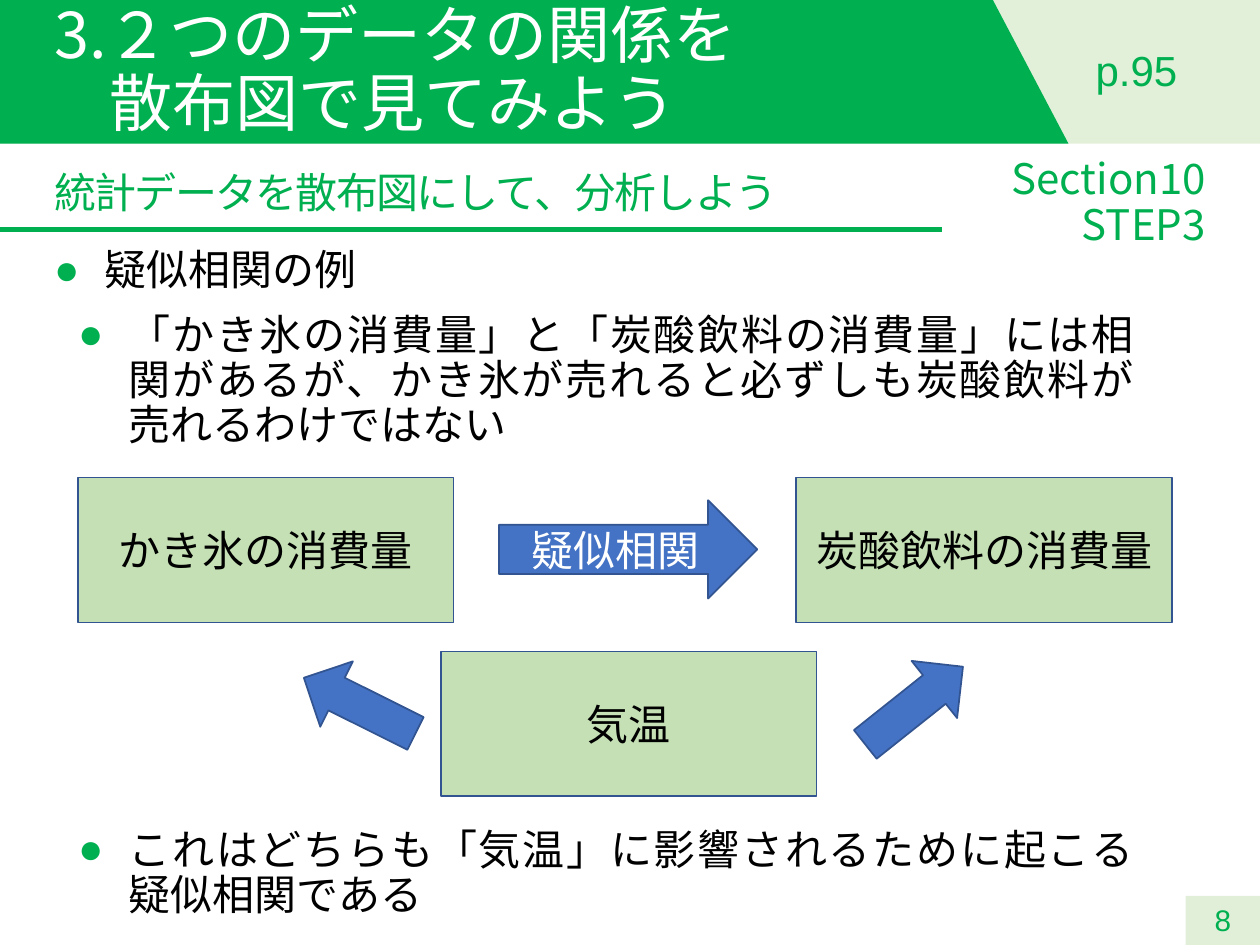
from dataclasses import dataclass, field

from lxml import etree
from pptx import Presentation
from pptx.dml.color import RGBColor
from pptx.enum.shapes import MSO_CONNECTOR, MSO_SHAPE
from pptx.enum.text import MSO_ANCHOR, MSO_AUTO_SIZE, PP_ALIGN
from pptx.oxml.ns import qn
from pptx.util import Inches, Pt

RECT, ARROW = MSO_SHAPE.RECTANGLE, MSO_SHAPE.RIGHT_ARROW
LINE = MSO_CONNECTOR.STRAIGHT
TOP, MID = MSO_ANCHOR.TOP, MSO_ANCHOR.MIDDLE
LEFT, RIGHT = PP_ALIGN.LEFT, PP_ALIGN.RIGHT
CENTER, JUST = PP_ALIGN.CENTER, PP_ALIGN.JUSTIFY
GROW, FIXED = MSO_AUTO_SIZE.SHAPE_TO_FIT_TEXT, MSO_AUTO_SIZE.NONE

# The slide is a grid of 100 columns by 75 rows
COLS, ROWS = 100, 75
WIDE, HIGH = Inches(10), Inches(7.5)
JP, LATIN = "Noto Sans CJK JP", "Arial"
HEX = {"green": "00B050", "pale": "E2F0D9", "leaf": "C5E0B4", "blue": "4472C4",
       "edge": "325491", "black": "000000", "white": "FFFFFF"}


@dataclass
class Style:
    color: str = "green"
    size: float = 24
    face: str = JP
    align: int = LEFT
    anchor: int = TOP
    fit: int = GROW
    pad: tuple = (0, 0.05, 0, 0.05)
    space: float | None = 0.9
    before: float = 0
    hang: float = 0
    bullet: str = ""
    track: int = 0


@dataclass
class Label:
    text: str
    area: tuple
    style: Style = field(default_factory=Style)


@dataclass
class Block:
    kind: int
    area: tuple
    fill: str
    edge: str = ""
    text: str = ""
    ink: str = "black"
    turn: float = 0
    alpha: int = 100


def col(n: float) -> int:
    return round(WIDE * n / COLS)


def row(n: float) -> int:
    return round(HIGH * n / ROWS)


def place(area: tuple) -> tuple:
    x, y, w, h = area
    return col(x), row(y), col(w), row(h)


def rgb(name: str) -> RGBColor:
    return RGBColor.from_string(HEX[name])


def apply(target, values: dict) -> None:
    for name, value in values.items():
        setattr(target, name, value)


def paint(shape, fill: str, edge: str = "", alpha: int = 100) -> None:
    shape.shadow.inherit = False
    shape.fill.solid()
    shape.fill.fore_color.rgb = rgb(fill)
    if alpha < 100:
        tint = shape.fill._xPr.find(qn("a:solidFill"))[0]
        etree.SubElement(tint, qn("a:alpha"), val=str(alpha * 1000))
    if edge:
        shape.line.color.rgb = rgb(edge)
        shape.line.width = Pt(1)
    else:
        shape.line.fill.background()


def write(shape, text: str, style: Style) -> None:
    frame = shape.text_frame
    left, top, right, low = map(Inches, style.pad)
    apply(frame, {"word_wrap": True, "auto_size": style.fit,
                  "vertical_anchor": style.anchor, "margin_left": left,
                  "margin_top": top, "margin_right": right, "margin_bottom": low})
    frame.text = text
    for para in frame.paragraphs:
        apply(para, {"alignment": style.align, "line_spacing": style.space,
                     "space_before": Pt(style.before)})
        props = para._p.get_or_add_pPr()
        if style.hang:
            props.set("marL", str(Inches(style.hang)))
            props.set("indent", str(-Inches(style.hang)))
        if style.bullet:
            tint = etree.SubElement(props, qn("a:buClr"))
            etree.SubElement(tint, qn("a:srgbClr"), val=HEX["green"])
            etree.SubElement(props, qn("a:buFont"), typeface=LATIN)
            etree.SubElement(props, qn("a:buChar"), char=style.bullet)
        for run in para.runs:
            apply(run.font, {"size": Pt(style.size), "name": style.face})
            run.font.color.rgb = rgb(style.color)
            mark = run.font._element
            mark.find(qn("a:latin")).addnext(
                mark.makeelement(qn("a:ea"), {"typeface": style.face}))
            if style.track:
                mark.set("spc", str(style.track))


def draw_block(slide, block: Block) -> None:
    shape = slide.shapes.add_shape(block.kind, *place(block.area))
    shape.rotation = block.turn
    paint(shape, block.fill, block.edge, block.alpha)
    if block.text:
        write(shape, block.text, Style(color=block.ink, align=CENTER, anchor=MID, fit=FIXED,
                                       pad=(0.1, 0.05, 0.1, 0.05), space=None))


def draw_label(slide, label: Label) -> None:
    write(slide.shapes.add_textbox(*place(label.area)), label.text, label.style)


def draw_banner(slide) -> None:
    pen = slide.shapes.build_freeform(0, 0)
    pen.add_line_segments([(col(78.8), 0), (col(84.8), row(BAND)), (0, row(BAND))], close=True)
    paint(pen.convert_to_shape(), "green")


def draw_rule(slide) -> None:
    rule = slide.shapes.add_connector(LINE, 0, row(18.2), col(74.8), row(18.2))
    rule.line.color.rgb = rgb("green")
    rule.line.width = Pt(3)
    etree.SubElement(rule._element.spPr, qn("a:effectLst"))


BAND = 11.4
BOX = (29.8, 11.5)
TIP = (9.9, 5.8)
ITEM = Style(color="black", align=JUST, pad=(0, 0, 0.02, 0.05), hang=0.4, bullet="●")

FRAME = [
    Block(RECT, (94.1, 71.1, 5.9, 3.9), "leaf", alpha=50),
    Block(RECT, (0, 0, COLS, BAND), "pale"),
]
HEADS = [
    Label("3.２つのデータの関係を\v散布図で見てみよう", (4.3, 0, 80.3, BAND),
          Style("white", 36, anchor=MID, fit=FIXED, pad=(0, 0, 0, 0), hang=0.44)),
    Label("8", (94.1, 71, 5.9, 4),
          Style(size=17, face=LATIN, align=CENTER, anchor=MID, fit=FIXED, space=None)),
    Label("統計データを散布図にして、分析しよう", (4.3, 13.2, 70.5, 4.6),
          Style(before=10, track=-100)),
    Label("Section10\nSTEP3", (71.1, 12.1, 24.6, 8.3), Style(align=RIGHT)),
    Label("p.95", (84.7, 3.5, 11, 4.6), Style(face=LATIN, align=CENTER, before=10)),
]
# Two consumption boxes share one cause below them
CHART = [
    Block(RECT, (x, y, *BOX), "leaf", "edge", text)
    for x, y, text in [(6.2, 37.9, "かき氷の消費量"), (63.2, 37.9, "炭酸飲料の消費量"),
                       (35, 51.7, "気温")]
] + [Block(ARROW, (39.6, 39.7, 20.5, 7.8), "blue", "edge", "疑似相関", "white")] + [
    Block(ARROW, (x, 53.1, *TIP), "blue", "edge", turn=turn)
    for x, turn in [(23.6, 206.5), (67.6, 321.5)]
]
ITEMS = [
    Label("疑似相関の例", (4.3, 19.8, 85.5, 4.1), ITEM),
    Label("「かき氷の消費量」と「炭酸飲料の消費量」には相関があるが、"
          "かき氷が売れると必ずしも炭酸飲料が売れるわけではない", (6.2, 24.9, 84, 11.4), ITEM),
    Label("これはどちらも「気温」に影響されるために起こる疑似相関である",
          (6.2, 65.8, 84, 7.8), ITEM),
]


def main() -> None:
    deck = Presentation()
    apply(deck, {"slide_width": WIDE, "slide_height": HIGH})
    slide = deck.slides.add_slide(deck.slide_layouts[6])
    # Page frame
    for block in FRAME:
        draw_block(slide, block)
    draw_banner(slide)
    draw_rule(slide)
    # Headings, diagram and bullet points
    for label in HEADS:
        draw_label(slide, label)
    for block in CHART:
        draw_block(slide, block)
    for label in ITEMS:
        draw_label(slide, label)
    deck.save("out.pptx")


if __name__ == "__main__":
    main()
